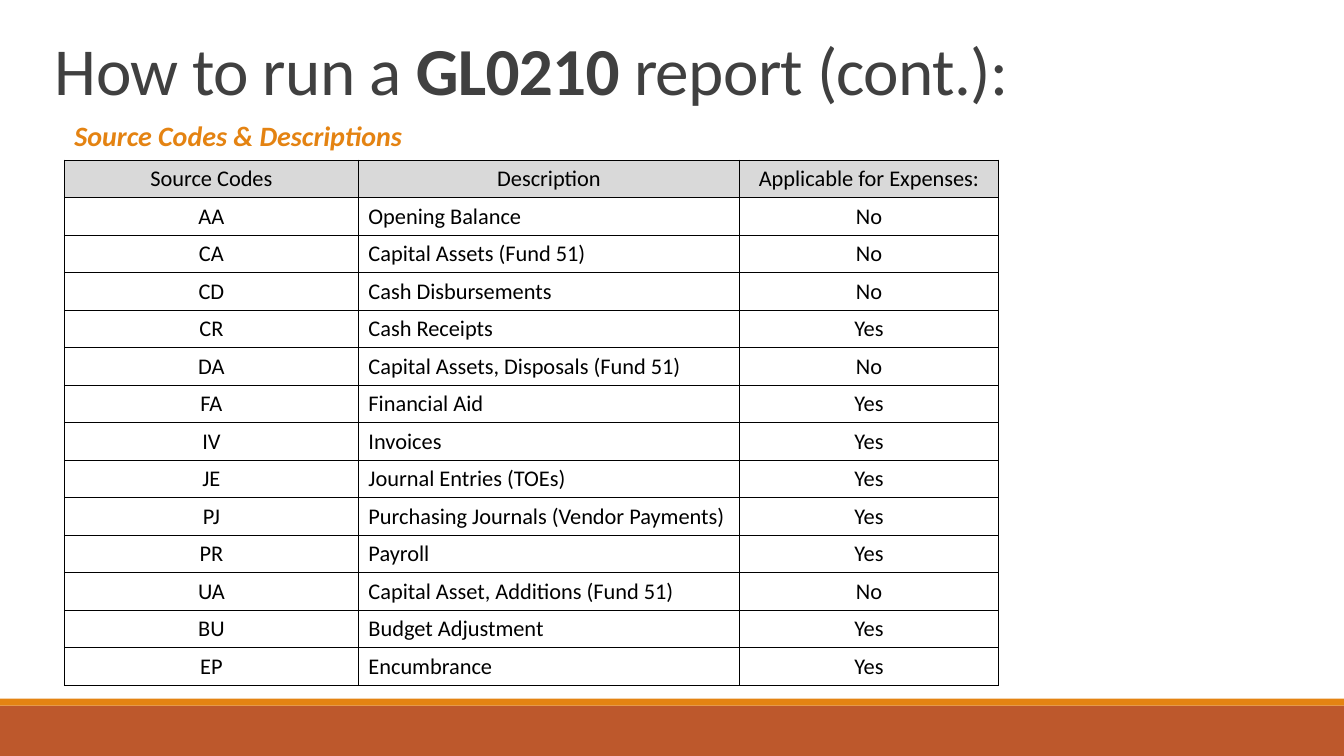
from dataclasses import dataclass

from lxml import etree
from pptx import Presentation
from pptx.dml.color import RGBColor
from pptx.enum import shapes, text
from pptx.oxml import ns
from pptx.util import Pt


@dataclass(frozen=True)
class Theme:
    font: str = "Calibri"
    title_size: int = 48
    subtitle_size: int = 20
    table_size: int = 16
    title: str = "404040"
    orange: str = "E48312"
    rust: str = "BD582C"
    header: str = "D9D9D9"
    body: str = "FFFFFF"
    ink: str = "000000"


THEME = Theme()
PAGE_WIDTH, PAGE_HEIGHT = 960, 540
ROW_HEIGHT = 26.8
COLUMN_WIDTHS = (210, 272.3, 184.8)
HEADINGS = ("Source Codes", "Description", "Applicable for Expenses:")
SOURCE_CODES = (
    ("AA", "Opening Balance", "No"),
    ("CA", "Capital Assets (Fund 51)", "No"),
    ("CD", "Cash Disbursements", "No"),
    ("CR", "Cash Receipts", "Yes"),
    ("DA", "Capital Assets, Disposals (Fund 51)", "No"),
    ("FA", "Financial Aid", "Yes"),
    ("IV", "Invoices", "Yes"),
    ("JE", "Journal Entries (TOEs)", "Yes"),
    ("PJ", "Purchasing Journals (Vendor Payments)", "Yes"),
    ("PR", "Payroll", "Yes"),
    ("UA", "Capital Asset, Additions (Fund 51)", "No"),
    ("BU", "Budget Adjustment", "Yes"),
    ("EP", "Encumbrance", "Yes"),
)


def set_font(font, size, color):
    font.name = THEME.font
    font.size = Pt(size)
    font.color.rgb = RGBColor.from_string(color)


def add_band(page, top, height, color):
    band = page.shapes.add_shape(
        shapes.MSO_SHAPE.RECTANGLE, 0, Pt(top), Pt(PAGE_WIDTH), Pt(height))
    band.shadow.inherit = False
    band.fill.solid()
    band.fill.fore_color.rgb = RGBColor.from_string(color)
    band.line.fill.background()


def add_text_box(page, left, top, width, height):
    """Add a wrapping, vertically centred box and return its text frame."""
    box = page.shapes.add_textbox(Pt(left), Pt(top), Pt(width), Pt(height))
    frame = box.text_frame
    frame.word_wrap = True
    frame.vertical_anchor = text.MSO_ANCHOR.MIDDLE
    return frame


def add_title(page):
    frame = add_text_box(page, 35.3, 22.3, 884, 62)
    frame.margin_left = Pt(4)
    para = frame.paragraphs[0]
    para.line_spacing = 0.85
    set_font(para.font, THEME.title_size, THEME.title)
    for words, bold in (("How to run a ", False), ("GL0210 ", True),
                        ("report (cont.):", False)):
        span = para.add_run()
        span.text = words
        span.font.bold = bold
        span.font._element.set("spc", "-50")


def add_subtitle(page):
    para = add_text_box(page, 46, 80.8, 667, 31.6).paragraphs[0]
    para.text = "Source Codes & Descriptions"
    set_font(para.font, THEME.subtitle_size, THEME.orange)
    para.font.bold = para.font.italic = True


def add_borders(cell):
    properties = cell._tc.get_or_add_tcPr()
    for side in ("lnL", "lnR", "lnT", "lnB"):
        line = etree.SubElement(properties, ns.qn(f"a:{side}"), w=str(Pt(1)))
        fill = etree.SubElement(line, ns.qn("a:solidFill"))
        etree.SubElement(fill, ns.qn("a:srgbClr"), val=THEME.ink)


def fill_cell(cell, words, color, centred):
    add_borders(cell)
    cell.fill.solid()
    cell.fill.fore_color.rgb = RGBColor.from_string(color)
    cell.vertical_anchor = text.MSO_ANCHOR.MIDDLE
    para = cell.text_frame.paragraphs[0]
    para.text = words
    para.alignment = text.PP_ALIGN.CENTER if centred else text.PP_ALIGN.LEFT
    set_font(para.font, THEME.table_size, THEME.ink)


def add_code_table(page):
    rows = (HEADINGS, *SOURCE_CODES)
    table = page.shapes.add_table(
        len(rows), len(HEADINGS), Pt(46), Pt(114.5),
        Pt(sum(COLUMN_WIDTHS)), Pt(ROW_HEIGHT * len(rows))).table
    for column, width in zip(table.columns, COLUMN_WIDTHS):
        column.width = Pt(width)
    for row_index, values in enumerate(rows):
        table.rows[row_index].height = Pt(ROW_HEIGHT)
        is_header = row_index == 0
        color = THEME.header if is_header else THEME.body
        for column_index, words in enumerate(values):
            fill_cell(table.cell(row_index, column_index), words, color,
                      centred=is_header or column_index != 1)


def main():
    deck = Presentation()
    deck.slide_width, deck.slide_height = Pt(PAGE_WIDTH), Pt(PAGE_HEIGHT)
    page = deck.slides.add_slide(deck.slide_layouts[6])
    add_band(page, 504, 36, THEME.rust)
    add_band(page, 499, 5, THEME.orange)
    add_title(page)
    add_code_table(page)
    add_subtitle(page)
    deck.save("out.pptx")


if __name__ == "__main__":
    main()
